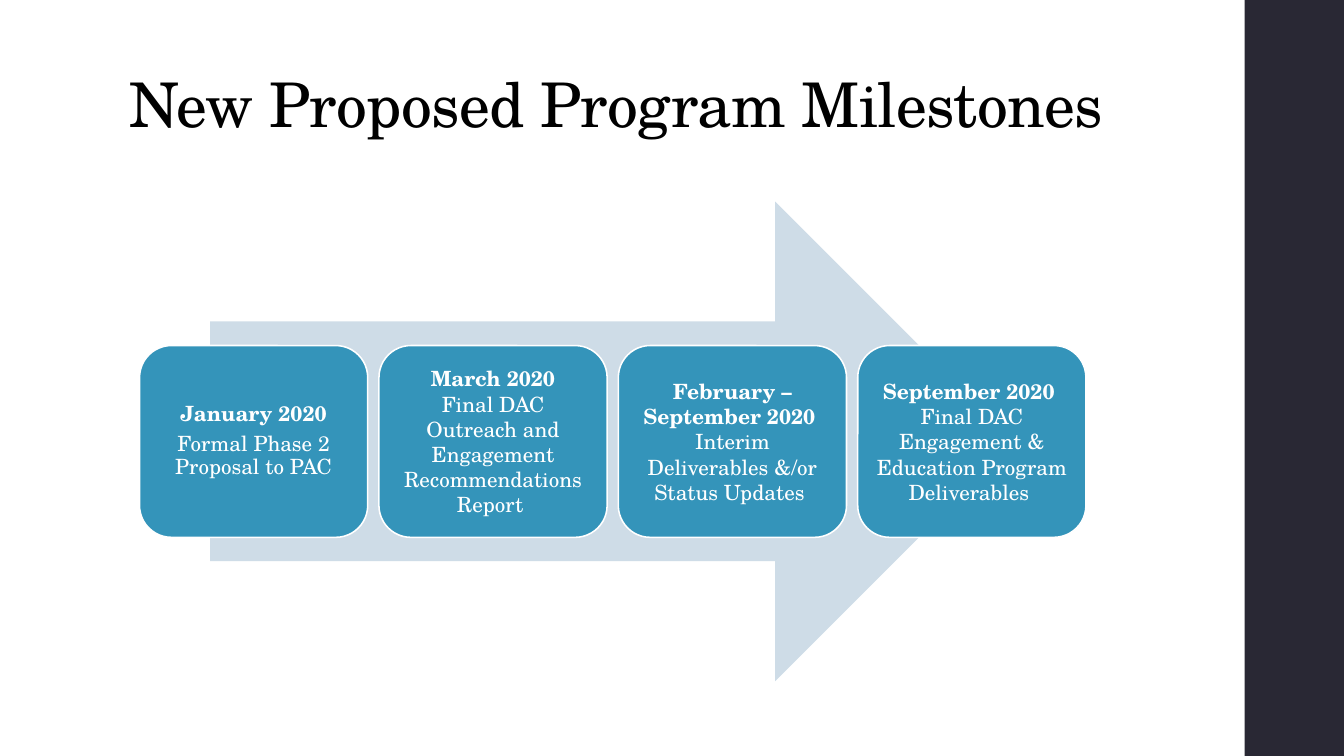
"""Build the slide of new proposed program milestones."""
from pptx import Presentation
from pptx import util as u
from pptx.dml.color import RGBColor
from pptx.enum import shapes, text

BLACK = RGBColor(0x00, 0x00, 0x00)
WHITE = RGBColor(0xFF, 0xFF, 0xFF)
DARK = RGBColor(0x29, 0x28, 0x34)
PALE = RGBColor(0xCE, 0xDC, 0xE7)
BLUE = RGBColor(0x34, 0x94, 0xBA)
FONT = "TeX Gyre Schola"
MILESTONES = [
    ("January 2020", "Formal Phase 2 Proposal to PAC", 0.9, 5.25),
    ("March 2020", "Final DAC Outreach and Engagement Recommendations Report ", 1, 0),
    ("February – September 2020 ", "Interim Deliverables &/or Status Updates ", 1, 0),
    ("September 2020 ", "Final DAC Engagement & Education Program Deliverables ", 1, 0),
]


def write(para, words, size=15, color=WHITE, bold=False, align=text.PP_ALIGN.CENTER,
          spacing=1, after=0):
    para.alignment = align
    para.line_spacing = spacing
    para.space_before = u.Pt(0)
    para.space_after = u.Pt(after)
    span = para.add_run()
    span.text = words
    span.font.name = FONT
    span.font.size = u.Pt(size)
    span.font.bold = bold
    span.font.color.rgb = color
    return span


def add_block(page, kind, left, top, width, height, fill):
    box = page.shapes.add_shape(kind, u.Pt(left), u.Pt(top), u.Pt(width), u.Pt(height))
    box.shadow.inherit = False
    box.fill.solid()
    box.fill.fore_color.rgb = fill
    box.line.fill.background()
    return box


deck = Presentation()
deck.slide_width, deck.slide_height = u.Pt(960), u.Pt(540)
page = deck.slides.add_slide(deck.slide_layouts[5])

title = page.shapes.title
title.left, title.top, title.width, title.height = u.Pt(85), u.Pt(0), u.Pt(763), u.Pt(104.4)
title.text_frame.word_wrap = True
title.text_frame.auto_size = text.MSO_AUTO_SIZE.NONE
title.text_frame.vertical_anchor = text.MSO_ANCHOR.BOTTOM
heading = write(title.text_frame.paragraphs[0], "New Proposed Program Milestones",
                size=44, color=BLACK, align=text.PP_ALIGN.LEFT, spacing=0.9)
heading.font._element.set("spc", "-50")

add_block(page, shapes.MSO_SHAPE.RECTANGLE, 889, 0, 71, 540, DARK)
add_block(page, shapes.MSO_SHAPE.RIGHT_ARROW, 150, 144, 575, 342.5, PALE)

for index, (date, task, spacing, after) in enumerate(MILESTONES):
    box = add_block(page, shapes.MSO_SHAPE.ROUNDED_RECTANGLE,
                    99.7 + 171 * index, 246.8, 163, 137, BLUE)
    box.line.color.rgb = WHITE
    box.line.width = u.Pt(1.1)
    frame = box.text_frame
    frame.word_wrap = True
    frame.vertical_anchor = text.MSO_ANCHOR.MIDDLE
    frame.margin_left = frame.margin_right = u.Pt(4.5)
    frame.margin_top = frame.margin_bottom = u.Pt(4.5)
    write(frame.paragraphs[0], date, bold=True, spacing=spacing, after=after)
    write(frame.add_paragraph(), task, spacing=spacing, after=after)

deck.save("out.pptx")
